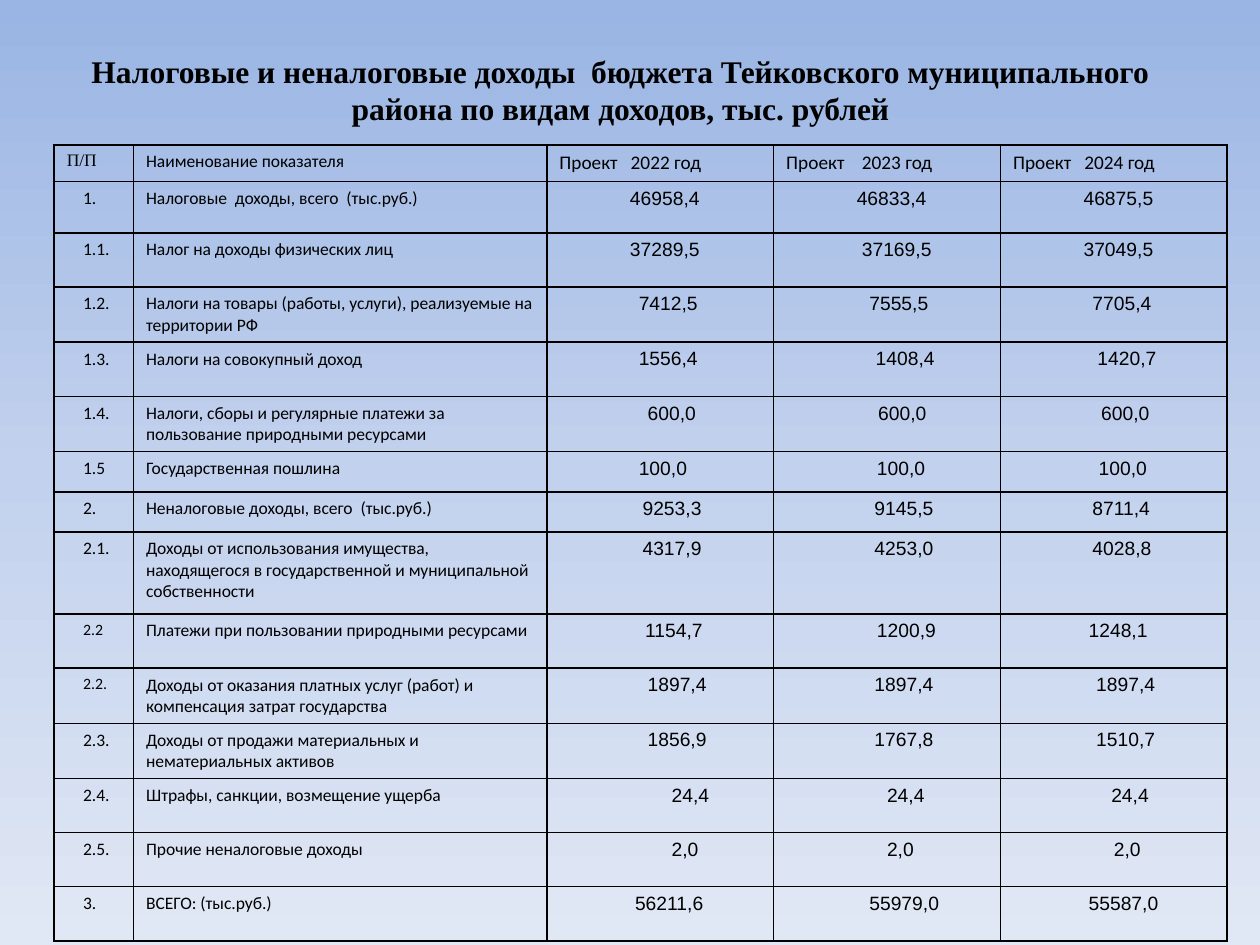
from copy import deepcopy

from pptx import Presentation
from pptx.dml.color import RGBColor
from pptx.enum.text import MSO_ANCHOR, PP_ALIGN
from pptx.oxml import parse_xml
from pptx.oxml.ns import nsdecls, qn
from pptx.util import Inches, Pt

TITLE = "Налоговые и неналоговые доходы  бюджета Тейковского муниципального района по видам доходов, тыс. рублей"
HEADERS = [
    "П/П",
    "Наименование показателя",
    "Проект   2022 год",
    "Проект    2023 год",
    "Проект   2024 год",
]
ROWS = [
    ("1.", "Налоговые  доходы, всего  (тыс.руб.)", ("46958,4", "46833,4", "46875,5")),
    ("1.1.", "Налог на доходы физических лиц", ("37289,5", "37169,5", "37049,5")),
    ("1.2.", "Налоги на товары (работы, услуги), реализуемые на территории РФ", ("7412,5", "7555,5", "7705,4")),
    ("1.3.", "Налоги на совокупный доход", ("1556,4", "1408,4", "1420,7")),
    ("1.4.", "Налоги, сборы и регулярные платежи за пользование природными ресурсами", ("600,0", "600,0", "600,0")),
    ("1.5", "Государственная пошлина", ("100,0", "100,0", "100,0")),
    ("2.", "Неналоговые доходы, всего  (тыс.руб.)", ("9253,3", "9145,5", "8711,4")),
    ("2.1.", "Доходы от использования имущества, находящегося в государственной и муниципальной собственности",
     ("4317,9", "4253,0", "4028,8")),
    ("2.2", "Платежи при пользовании природными ресурсами", ("1154,7", "1200,9", "1248,1")),
    ("2.2.", "Доходы от оказания платных услуг (работ) и компенсация затрат государства",
     ("1897,4", "1897,4", "1897,4")),
    ("2.3.", "Доходы от продажи материальных и нематериальных активов", ("1856,9", "1767,8", "1510,7")),
    ("2.4.", "Штрафы, санкции, возмещение ущерба", ("24,4", "24,4", "24,4")),
    ("2.5.", "Прочие неналоговые доходы", ("2,0", "2,0", "2,0")),
    ("3.", "ВСЕГО: (тыс.руб.)", ("56211,6", "55979,0", "55587,0")),
]
VALUE_INDENTS = [
    (0.56, 0.56, 0.56),
    (0.56, 0.6, 0.56),
    (0.63, 0.66, 0.63),
    (0.63, 0.71, 0.67),
    (0.7, 0.73, 0.7),
    (0.63, 0.72, 0.68),
    (0.66, 0.7, 0.63),
    (0.66, 0.7, 0.63),
    (0.68, 0.72, 0.6),
    (0.7, 0.7, 0.66),
    (0.7, 0.7, 0.66),
    (0.89, 0.8, 0.78),
    (0.89, 0.8, 0.8),
    (0.6, 0.66, 0.6),
]
NUMBER_INDENT = 0.13
COLUMN_WIDTHS = [0.63, 3.28, 1.8, 1.8, 1.8]
USUAL_HEIGHT = 0.43
ROW_HEIGHTS = {0: 0.28, 1: 0.41, 6: 0.32, 7: 0.32, 8: 0.65}

THEME = {
    "ink": "000000",
    "background": [(0, "9AB5E4"), (50, "C2D1ED"), (100, "E1E8F5")],
    "border": 1,
    "space_before": 2,
    "title": {"name": "Times New Roman", "size": Pt(18), "bold": True},
    "corner": {"name": "Times New Roman", "size": Pt(10)},
    "label": {"name": "Calibri", "size": Pt(10)},
    "small": {"name": "Calibri", "size": Pt(9)},
    "year": {"name": "Calibri", "size": Pt(11)},
    "value": {"name": "Arial", "size": Pt(11)},
}


def add_text(paragraph, text, style):
    run = paragraph.add_run()
    run.text = text
    for name, value in THEME[style].items():
        setattr(run.font, name, value)
    run.font.color.rgb = RGBColor.from_string(THEME["ink"])


def paint_background(slide):
    fill = slide.background.fill
    fill.gradient()
    fill.gradient_angle = 270
    stop_list = next(slide.element.iter(qn("a:gsLst")))
    stop_list.append(deepcopy(stop_list[0]))
    for stop, (position, color) in zip(fill.gradient_stops, THEME["background"]):
        stop.position = position / 100
        stop.color.rgb = RGBColor.from_string(color)


def add_borders(cell):
    properties = cell._tc.get_or_add_tcPr()
    for index, side in enumerate(("lnL", "lnR", "lnT", "lnB")):
        properties.insert(index, parse_xml(
            f'<a:{side} {nsdecls("a")} w="{Pt(THEME["border"])}"><a:solidFill>'
            f'<a:srgbClr val="{THEME["ink"]}"/></a:solidFill></a:{side}>'
        ))


def fill_cell(cell, text, style, indent=0.0):
    cell.fill.background()
    add_borders(cell)
    paragraph = cell.text_frame.paragraphs[0]
    paragraph.space_before = Pt(0 if style == "corner" else THEME["space_before"])
    if indent:
        paragraph._p.get_or_add_pPr().set("marL", str(Inches(indent)))
    add_text(paragraph, text, style)


def add_title(slide):
    title = slide.shapes.title
    box = {"left": 0.43, "top": 0, "width": 8.99, "height": 1.42}
    for name, value in box.items():
        setattr(title, name, Inches(value))
    title.text_frame.vertical_anchor = MSO_ANCHOR.MIDDLE
    paragraph = title.text_frame.paragraphs[0]
    paragraph.alignment = PP_ALIGN.CENTER
    add_text(paragraph, TITLE, "title")


def add_income_table(slide):
    heights = [ROW_HEIGHTS.get(index, USUAL_HEIGHT) for index in range(len(ROWS) + 1)]
    table = slide.shapes.add_table(
        len(heights), len(COLUMN_WIDTHS), Inches(0.43), Inches(1.15),
        Inches(sum(COLUMN_WIDTHS)), Inches(sum(heights)),
    ).table
    table.first_row = table.horz_banding = False
    for column, width in zip(table.columns, COLUMN_WIDTHS):
        column.width = Inches(width)
    for row, height in zip(table.rows, heights):
        row.height = Inches(height)

    header_styles = ["corner", "label", "year", "year", "year"]
    for index, (text, style) in enumerate(zip(HEADERS, header_styles)):
        fill_cell(table.cell(0, index), text, style)
    for index, ((number, name, values), indents) in enumerate(zip(ROWS, VALUE_INDENTS), 1):
        number_style = "small" if number.startswith("2.2") else "label"
        fill_cell(table.cell(index, 0), number, number_style, NUMBER_INDENT)
        fill_cell(table.cell(index, 1), name, "label")
        for column, (value, indent) in enumerate(zip(values, indents), 2):
            fill_cell(table.cell(index, column), value, "value", indent)


def main():
    presentation = Presentation()
    presentation.slide_width = Inches(10)
    presentation.slide_height = Inches(7.5)
    slide = presentation.slides.add_slide(presentation.slide_layouts[5])
    paint_background(slide)
    add_title(slide)
    add_income_table(slide)
    presentation.save("out.pptx")


if __name__ == "__main__":
    main()
